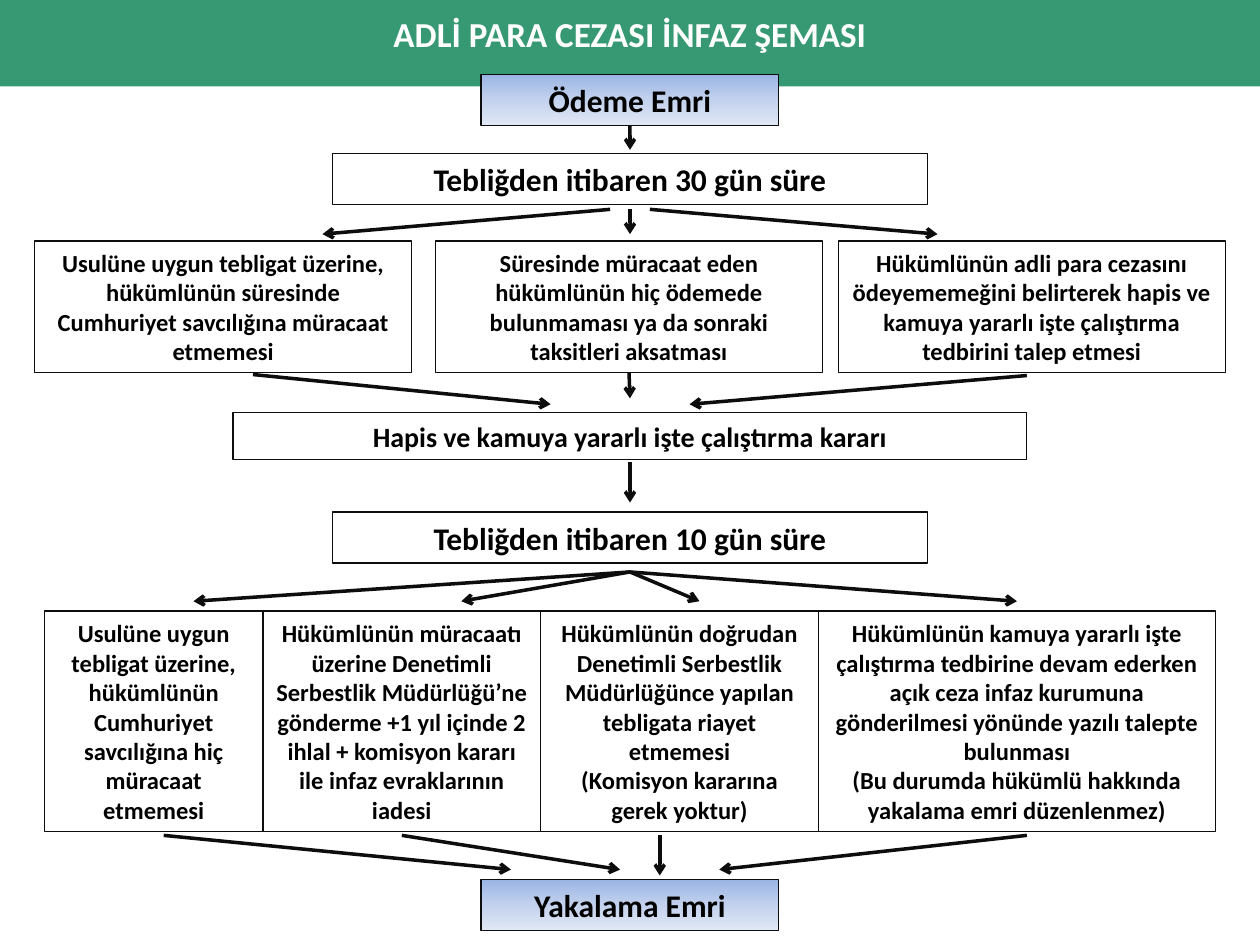
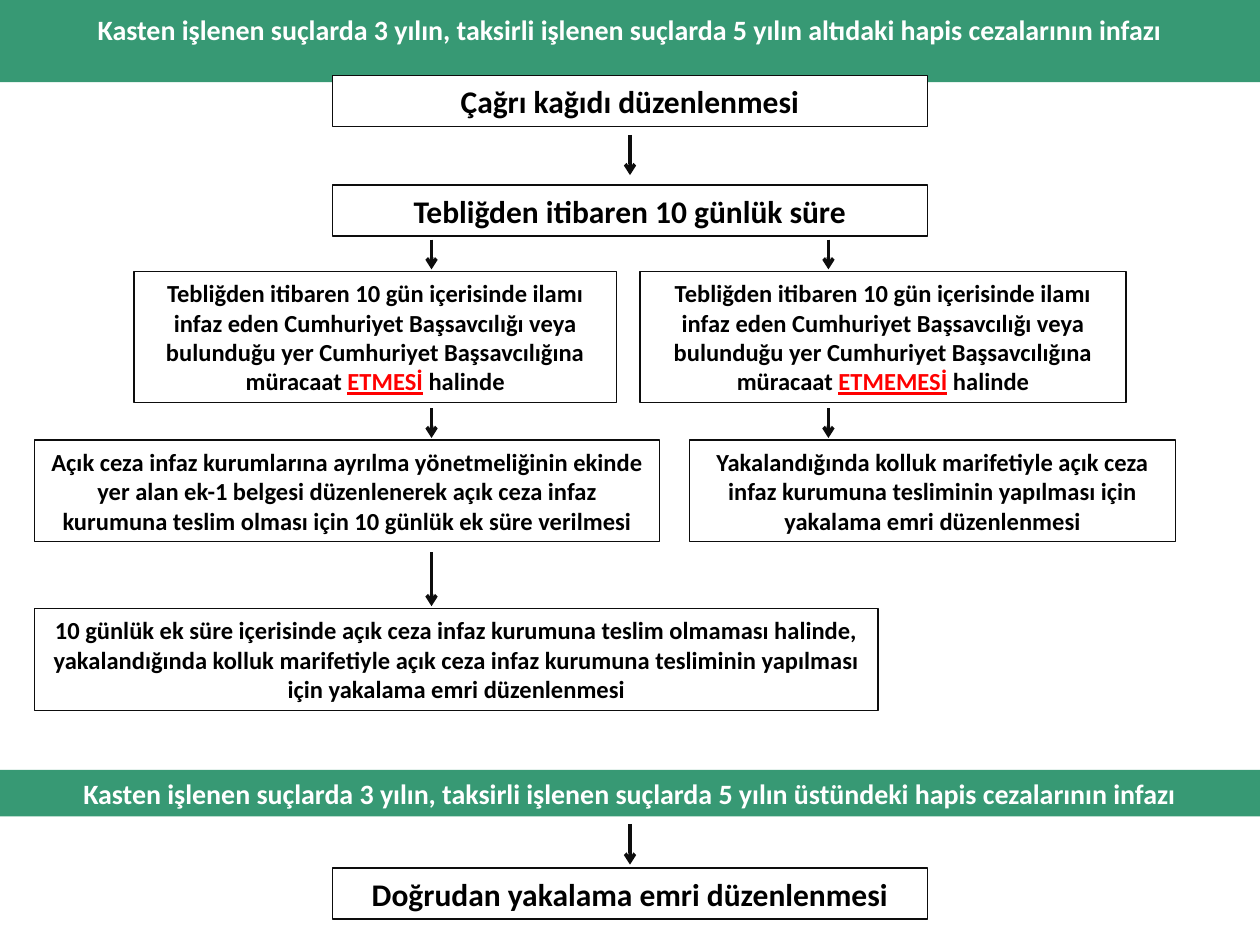
from copy import deepcopy
from dataclasses import dataclass
from typing import Optional

from lxml import etree
from pptx import Presentation
from pptx import util as u
from pptx.dml.color import RGBColor
from pptx.enum import shapes, text
from pptx.oxml.ns import qn

GREEN = RGBColor(0x37, 0x99, 0x74)
WHITE = RGBColor(0xFF, 0xFF, 0xFF)
BLACK = RGBColor(0x00, 0x00, 0x00)
INK = RGBColor(0x0D, 0x0D, 0x0D)
RED = RGBColor(0xFF, 0x00, 0x00)
BLUES = (
    RGBColor(0x9A, 0xB5, 0xE4),
    RGBColor(0xC2, 0xD1, 0xED),
    RGBColor(0xE1, 0xE8, 0xF5),
)
FONT = "Calibri"
PAGE_WIDTH, PAGE_HEIGHT = 25.4, 19.05
CENTRE = PAGE_WIDTH / 2
BAND_TOP = 0.13
LINE_HEIGHT = 1.03
WIDE, NARROW = 12, 6


@dataclass(frozen=True)
class Box:
    words: str
    left: float
    top: float
    width: float
    height: float
    size: int = 14
    shaded: bool = False


@dataclass(frozen=True)
class Arrow:
    x1: float
    y1: float
    x2: float
    y2: float
    source: Optional[Box] = None


def centred(words: str, top: float, width: float = WIDE, height: float = LINE_HEIGHT,
            size: int = 18, shaded: bool = False) -> Box:
    return Box(words, CENTRE - width / 2, top, width, height, size, shaded)


def down(x: float, top: float, bottom: float, source: Optional[Box] = None) -> Arrow:
    return Arrow(x, top, x, bottom, source)


def row(top: float, height: float, *cells: tuple[float, float, str]) -> list[Box]:
    return [Box(words, left, top, width, height) for left, width, words in cells]


def write(shape, words: str, *, size: int, color: RGBColor = BLACK) -> None:
    frame = shape.text_frame
    frame.word_wrap = True
    frame.auto_size = text.MSO_AUTO_SIZE.SHAPE_TO_FIT_TEXT
    frame.vertical_anchor = text.MSO_ANCHOR.MIDDLE
    for index, line in enumerate(words.split("\n")):
        para = frame.paragraphs[0] if index == 0 else frame.add_paragraph()
        para.alignment = text.PP_ALIGN.CENTER
        for part, piece in enumerate(line.split("*")):
            stressed = part % 2 == 1
            span = para.add_run()
            span.text = piece
            span.font.name = FONT
            span.font.size = u.Pt(size)
            span.font.bold = True
            span.font.color.rgb = RED if stressed else color
            if stressed:
                span.font.underline = True


def place(shape, left: float, top: float, width: float, height: float) -> None:
    shape.left, shape.top = u.Cm(left), u.Cm(top)
    shape.width, shape.height = u.Cm(width), u.Cm(height)


def add_rectangle(page):
    shape = page.shapes.add_shape(shapes.MSO_SHAPE.RECTANGLE, 0, 0, 0, 0)
    shape.shadow.inherit = False
    return shape


def format_band(shape, words: str, top: float, height: float, size: int) -> None:
    place(shape, 0, top, PAGE_WIDTH, height)
    shape.fill.solid()
    shape.fill.fore_color.rgb = GREEN
    shape.line.fill.background()
    write(shape, words, size=size, color=WHITE)


def shade(shape) -> None:
    shape.fill.gradient()
    shape.fill.gradient_angle = 270
    stop_list = shape._element.spPr.find(qn("a:gradFill")).find(qn("a:gsLst"))
    stop_list.insert(1, deepcopy(stop_list[0]))
    for index, (stop, color) in enumerate(zip(shape.fill.gradient_stops, BLUES)):
        stop.color.rgb = color
        stop.position = index / 2


def draw_box(page, box: Box):
    shape = add_rectangle(page)
    place(shape, box.left, box.top, box.width, box.height)
    if box.shaded:
        shade(shape)
    else:
        shape.fill.solid()
        shape.fill.fore_color.rgb = WHITE
    shape.line.color.rgb = INK
    shape.line.width = u.Pt(0.75 if box.size == 18 else 0)
    write(shape, box.words, size=box.size)
    return shape


def draw_arrow(page, arrow: Arrow, drawn: dict) -> None:
    line = page.shapes.add_connector(
        shapes.MSO_CONNECTOR.STRAIGHT,
        u.Cm(arrow.x1), u.Cm(arrow.y1), u.Cm(arrow.x2), u.Cm(arrow.y2),
    )
    if arrow.source:
        line.begin_connect(drawn[arrow.source], 2)
    line.line.color.rgb = INK
    line.line.width = u.Pt(2)
    etree.SubElement(line.line._get_or_add_ln(), qn("a:tailEnd"), type="arrow")
    etree.SubElement(line._element.spPr, qn("a:effectLst"))


def add_page(deck, title: str, height: float, size: int, boxes: list[Box], arrows: list[Arrow]):
    page = deck.slides.add_slide(deck.slide_layouts[5])
    format_band(page.shapes.title, title, BAND_TOP, height, size)
    drawn = {box: draw_box(page, box) for box in boxes}
    for arrow in arrows:
        draw_arrow(page, arrow, drawn)
    return page


def add_fine_page(deck) -> None:
    order = centred("Ödeme Emri", 1.5, NARROW, shaded=True)
    reasons = row(
        4.86, 2.65,
        (0.7, 7.6, "Usulüne uygun tebligat üzerine, hükümlünün süresinde Cumhuriyet "
                   "savcılığına müracaat etmemesi"),
        (8.78, 7.8, "Süresinde müracaat eden hükümlünün hiç ödemede bulunmaması ya da "
                    "sonraki taksitleri aksatması"),
        (16.9, 7.8, "Hükümlünün adli para cezasını ödeyememeğini belirterek hapis ve kamuya "
                    "yararlı işte çalıştırma tedbirini talep etmesi"),
    )
    breaches = row(
        12.32, 4.44,
        (0.9, 4.4, "Usulüne uygun tebligat üzerine, hükümlünün Cumhuriyet savcılığına hiç "
                   "müracaat etmemesi"),
        (5.3, 5.6, "Hükümlünün müracaatı üzerine Denetimli Serbestlik Müdürlüğü’ne gönderme "
                   "+1 yıl içinde 2 ihlal + komisyon kararı ile infaz evraklarının iadesi"),
        (10.9, 5.6, "Hükümlünün doğrudan Denetimli Serbestlik Müdürlüğünce yapılan tebligata "
                    "riayet etmemesi\n(Komisyon kararına gerek yoktur)"),
        (16.5, 8, "Hükümlünün kamuya yararlı işte çalıştırma tedbirine devam ederken açık ceza "
                  "infaz kurumuna gönderilmesi yönünde yazılı talepte bulunması\n"
                  "(Bu durumda hükümlü hakkında yakalama emri düzenlenmez)"),
    )
    boxes = [
        order,
        centred("Tebliğden itibaren 30 gün süre", 3.1),
        *reasons,
        centred("Hapis ve kamuya yararlı işte çalıştırma kararı", 8.32, 16, 0.94, 16),
        centred("Tebliğden itibaren 10 gün süre", 10.32),
        *breaches,
        centred("Yakalama Emri", 17.73, NARROW, shaded=True),
    ]
    arrows = [
        down(CENTRE, 2.53, 3.02, order),
        down(CENTRE, 4.22, 4.72),
        Arrow(12.3, 4.22, 6.5, 4.72),
        Arrow(13.1, 4.22, 18.9, 4.72),
        down(CENTRE, 7.51, 8.03, reasons[1]),
        Arrow(5.1, 7.55, 11.1, 8.15),
        Arrow(20.7, 7.57, 13.9, 8.15),
        down(CENTRE, 9.32, 10.13),
        *(Arrow(CENTRE, 11.53, x, 12.12) for x in (3.9, 9.3, 14.1, 20.5)),
        down(13.3, 16.84, 17.65),
        *(Arrow(x, 16.84, end, 17.53) for x, end in ((3.3, 10.3), (8.1, 12.5), (20.7, 14.5))),
    ]
    add_page(deck, "ADLİ PARA CEZASI İNFAZ ŞEMASI", 1.11, 20, boxes, arrows)


def add_prison_page(deck) -> None:
    heading = ("Kasten işlenen suçlarda 3 yılın, taksirli işlenen suçlarda 5 yılın {} "
               "hapis cezalarının infazı")
    application = ("Tebliğden itibaren 10 gün içerisinde ilamı infaz eden Cumhuriyet "
                   "Başsavcılığı veya bulunduğu yer Cumhuriyet Başsavcılığına müracaat "
                   "*{}* halinde")
    left_path, right_path = 8.7, 16.7
    boxes = [
        centred("Çağrı kağıdı düzenlenmesi", 1.52),
        centred("Tebliğden itibaren 10 günlük süre", 3.73),
        *row(5.47, 2.65,
             (2.7, 9.73, application.format("ETMESİ")),
             (12.9, 9.8, application.format("ETMEMESİ"))),
        *row(8.87, 2.05,
             (0.7, 12.6, "Açık ceza infaz kurumlarına ayrılma yönetmeliğinin ekinde yer alan "
                         "ek-1 belgesi düzenlenerek açık ceza infaz kurumuna teslim olması için "
                         "10 günlük ek süre verilmesi"),
             (13.9, 9.8, "Yakalandığında kolluk marifetiyle açık ceza infaz kurumuna tesliminin "
                         "yapılması için yakalama emri düzenlenmesi")),
        *row(12.27, 2.05,
             (0.7, 17, "10 günlük ek süre içerisinde açık ceza infaz kurumuna teslim olmaması "
                       "halinde, yakalandığında kolluk marifetiyle açık ceza infaz kurumuna "
                       "tesliminin yapılması için yakalama emri düzenlenmesi")),
        centred("Doğrudan yakalama emri düzenlenmesi", 17.5),
    ]
    arrows = [
        down(CENTRE, 2.72, 3.53),
        *(down(x, top, top + 0.6) for top in (4.83, 8.23) for x in (left_path, right_path)),
        down(left_path, 11.13, 12.22),
        down(CENTRE, 16.61, 17.43),
    ]
    page = add_page(deck, heading.format("altıdaki"), 0.94, 16, boxes, arrows)
    format_band(add_rectangle(page), heading.format("üstündeki"), 15.52, 0.94, 16)


def main() -> None:
    deck = Presentation()
    deck.slide_width, deck.slide_height = u.Cm(PAGE_WIDTH), u.Cm(PAGE_HEIGHT)
    add_fine_page(deck)
    add_prison_page(deck)
    deck.save("out.pptx")


if __name__ == "__main__":
    main()
